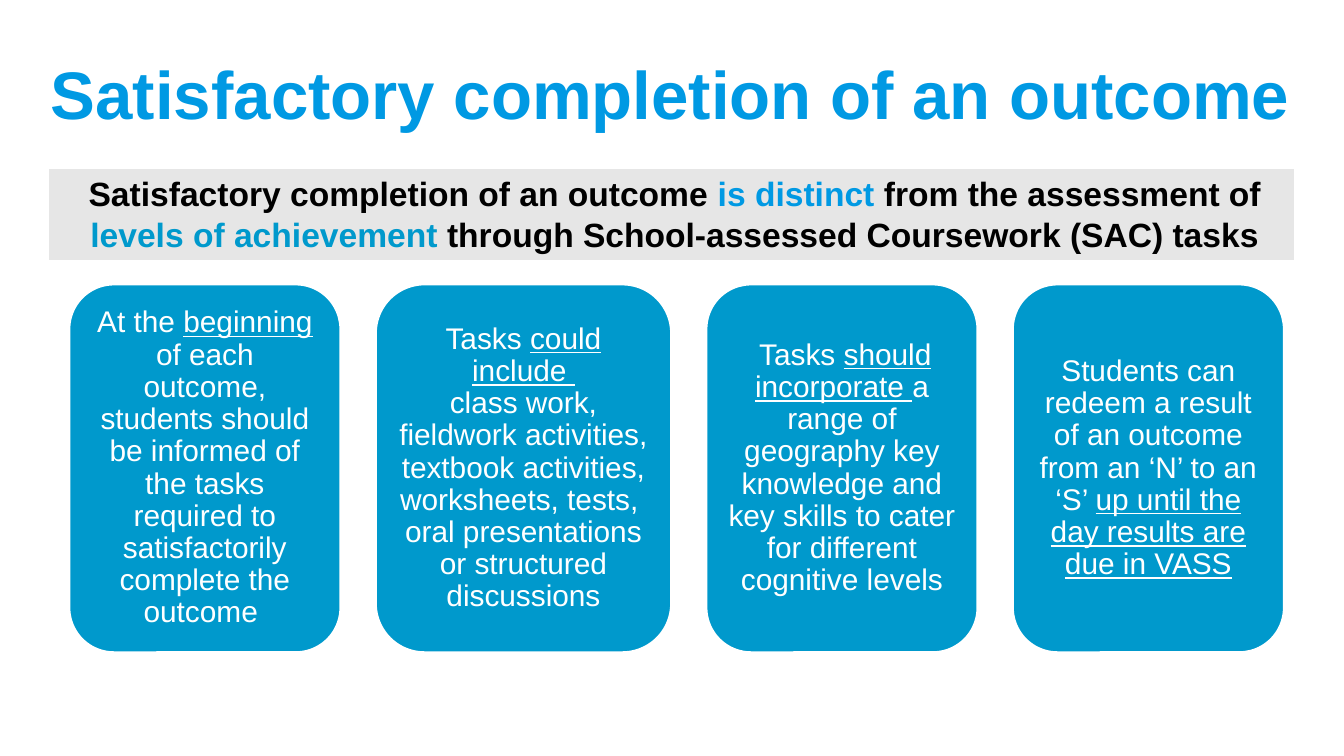
from dataclasses import dataclass

from pptx import Presentation
from pptx.dml.color import RGBColor
from pptx.enum.shapes import MSO_SHAPE
from pptx.enum.text import MSO_ANCHOR, PP_ALIGN
from pptx.shapes.autoshape import Shape
from pptx.slide import Slide
from pptx.util import Inches, Pt

COLORS = {
    "title": "0099E3",
    "card": "0099CC",
    "banner": "E6E6E6",
    "black": "000000",
    "white": "FFFFFF",
}
CARD_START, CARD_TOP, CARD_HEIGHT, CARD_GAP = 0.51, 2.11, 2.75, 0.25


@dataclass(frozen=True)
class Span:
    """A stretch of text and what sets it apart from its paragraph."""
    text: str
    color: str | None = None
    underline: bool = False
    font: str | None = None
    bold: bool | None = None


@dataclass(frozen=True)
class Card:
    """A rounded panel with its width in inches."""
    width: float
    spans: tuple[Span, ...]


CARDS = (
    Card(2.03, (
        Span("At the "),
        Span("beginning ", underline=True),
        Span("of each outcome, students should be informed of the tasks "
             "required to satisfactorily complete the outcome "),
    )),
    Card(2.21, (
        Span("Tasks "),
        Span("could include \n", underline=True),
        Span("class work, fieldwork activities, textbook activities, "
             "worksheets, tests, \noral presentations or structured discussions"),
    )),
    Card(2.03, (
        Span(" ", font="Calibri", bold=True),
        Span("Tasks "),
        Span("should incorporate ", underline=True),
        Span("a range of geography key knowledge and key skills to cater "
             "for different cognitive levels"),
    )),
    Card(2.03, (
        Span("Students can redeem a result of an outcome from an ‘N’ to an ‘S’ "),
        Span("up until the day results are due in VASS", underline=True),
    )),
)

BANNER = (
    Span("Satisfactory completion of an outcome "),
    Span("is distinct ", "title"),
    Span("from the assessment of "),
    Span("levels of achievement ", "card"),
    Span("through School-assessed Coursework (SAC) tasks"),
)


def rgb(name: str) -> RGBColor:
    """Look up a named colour."""
    return RGBColor.from_string(COLORS[name])


def write(shape: Shape, spans: tuple[Span, ...], size: float, color: str,
          bold: bool, align: PP_ALIGN, line_spacing: float = 1.0,
          anchor: MSO_ANCHOR = MSO_ANCHOR.MIDDLE) -> None:
    """Write spans as one paragraph."""
    frame = shape.text_frame
    frame.word_wrap = True
    frame.vertical_anchor = anchor
    paragraph = frame.paragraphs[0]
    paragraph.alignment = align
    paragraph.line_spacing = line_spacing
    paragraph.font.name = "Arial"
    paragraph.font.size = Pt(size)
    paragraph.font.bold = bold
    paragraph.font.color.rgb = rgb(color)
    for span in spans:
        for index, line in enumerate(span.text.split("\n")):
            if index:
                paragraph.add_line_break()
            if not line:
                continue
            run = paragraph.add_run()
            run.text = line
            if span.color:
                run.font.color.rgb = rgb(span.color)
            if span.underline:
                run.font.underline = True
            if span.font:
                run.font.name = span.font
            if span.bold is not None:
                run.font.bold = span.bold


def add_panel(slide: Slide, kind: MSO_SHAPE, left: float, top: float,
              width: float, height: float, fill: str) -> Shape:
    """Add a filled panel with a white outline."""
    panel = slide.shapes.add_shape(
        kind, Inches(left), Inches(top), Inches(width), Inches(height))
    panel.shadow.inherit = False
    panel.fill.solid()
    panel.fill.fore_color.rgb = rgb(fill)
    panel.line.color.rgb = rgb("white")
    panel.line.width = Pt(2)
    return panel


def add_cards(slide: Slide) -> None:
    """Lay the cards out in a row with equal gaps."""
    left = CARD_START
    for card in CARDS:
        panel = add_panel(slide, MSO_SHAPE.ROUNDED_RECTANGLE, left, CARD_TOP,
                          card.width, CARD_HEIGHT, "card")
        frame = panel.text_frame
        frame.margin_left = frame.margin_right = Inches(0.07)
        frame.margin_top = frame.margin_bottom = Inches(0.07)
        write(panel, card.spans, 16, "white", False, PP_ALIGN.CENTER, 0.9)
        left += card.width + CARD_GAP


def main() -> None:
    """Build the slide and save it."""
    presentation = Presentation()
    presentation.slide_width = Inches(10)
    presentation.slide_height = Inches(10) * 9 // 16
    slide = presentation.slides.add_slide(presentation.slide_layouts[6])

    title = slide.shapes.add_textbox(
        Inches(0.28), Inches(0.14), Inches(9.53), Inches(1.1))
    write(title, (Span("Satisfactory completion of an outcome"),),
          36, "title", True, PP_ALIGN.LEFT)

    banner = add_panel(slide, MSO_SHAPE.RECTANGLE, 0.35, 1.24, 9.29, 0.71, "banner")
    banner.text_frame.margin_left = Inches(0.15)
    write(banner, BANNER, 18, "black", True, PP_ALIGN.CENTER, anchor=MSO_ANCHOR.TOP)

    add_cards(slide)
    presentation.save("out.pptx")


if __name__ == "__main__":
    main()
